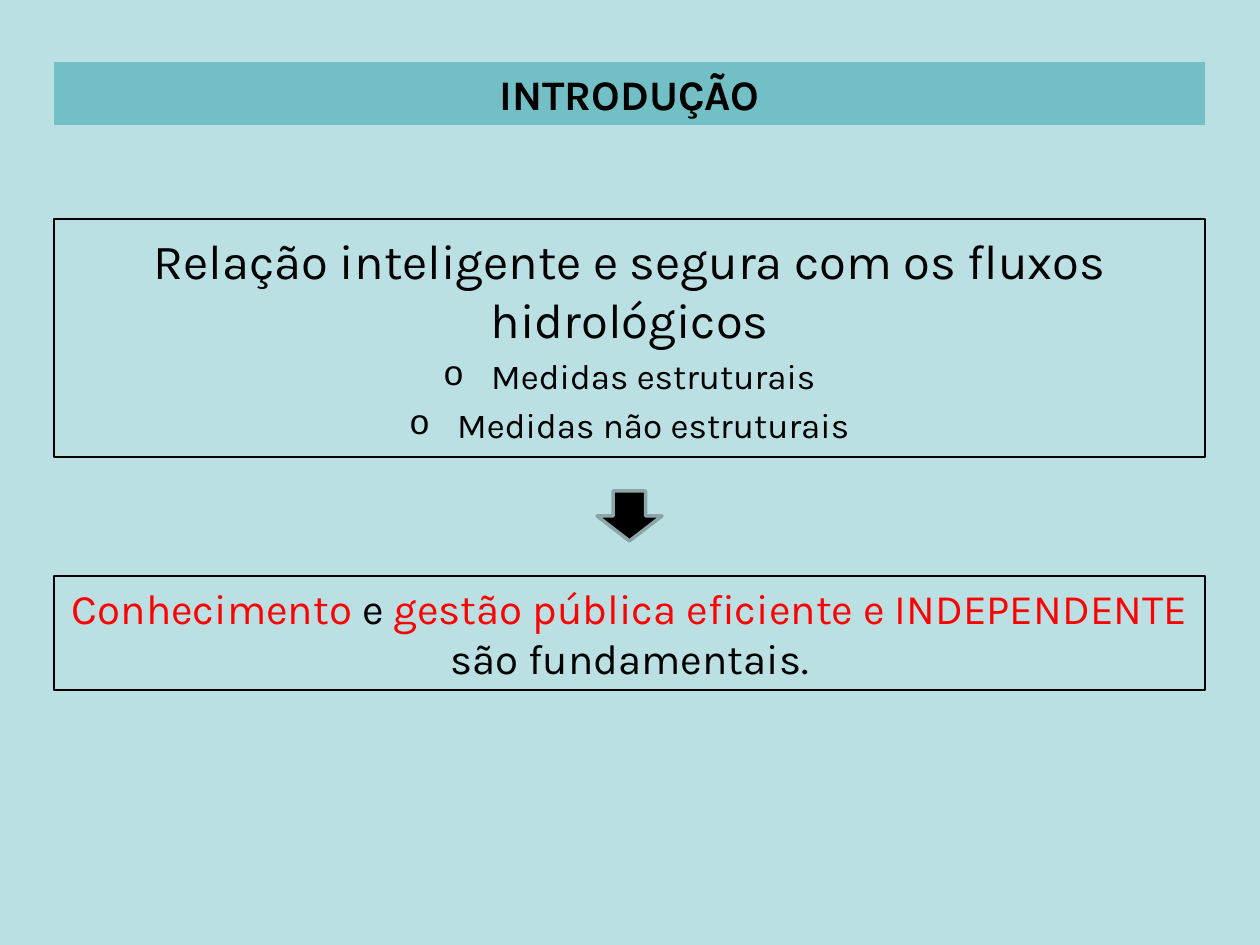
from lxml import etree
from pptx import Presentation
from pptx import util as u
from pptx.dml.color import RGBColor
from pptx.enum import shapes, text
from pptx.oxml import ns

EMU_PER_PX = 914400 / 126
LEFT, WIDTH = 54, 1151
BLACK, RED = "000000", "FF0000"


def px(length):
    return u.Emu(round(length * EMU_PER_PX))


def color(value):
    return RGBColor.from_string(value)


class SlideBuilder:
    def __init__(self, deck, background, font):
        self.font = font
        self.page = deck.slides.add_slide(deck.slide_layouts[1])
        self.paint(self.page.background, background)

    def paint(self, item, fill):
        item.fill.solid()
        item.fill.fore_color.rgb = color(fill)

    def outline(self, shape, line, width):
        shape.line.color.rgb = color(line)
        shape.line.width = u.Pt(width)

    def place(self, shape, left, top, width, height):
        shape.left, shape.top = px(left), px(top)
        shape.width, shape.height = px(width), px(height)
        frame = shape.text_frame
        frame.word_wrap = True
        frame.auto_size = text.MSO_AUTO_SIZE.NONE
        frame.vertical_anchor = text.MSO_ANCHOR.MIDDLE
        return frame

    def style(self, para, size, bold=False):
        para.alignment = text.PP_ALIGN.CENTER
        para.font.name = self.font
        para.font.size = u.Pt(size)
        para.font.bold = bold
        para.font.color.rgb = color(BLACK)

    def bullet(self, para, indent, mark=None):
        """Set a hanging bullet, or none when there is no mark."""
        props = para._p.get_or_add_pPr()
        props.set("marL", str(px(indent)))
        props.set("indent", str(-px(indent)))
        if mark:
            etree.SubElement(props, ns.qn("a:buFont")).set("typeface", "Courier New")
            etree.SubElement(props, ns.qn("a:buChar")).set("char", mark)
        else:
            etree.SubElement(props, ns.qn("a:buNone"))

    def title(self, words, top, height, fill):
        shape = self.page.shapes.title
        frame = self.place(shape, LEFT, top, WIDTH, height)
        self.paint(shape, fill)
        frame.text = words
        self.style(frame.paragraphs[0], 24, bold=True)

    def body(self, heading, items, top, height):
        shape = self.page.placeholders[1]
        frame = self.place(shape, LEFT, top, WIDTH, height)
        self.outline(shape, BLACK, 0.75)
        frame.text = "\n".join([heading, *items])
        first, *rest = frame.paragraphs
        self.bullet(first, 0)
        first.space_before = u.Pt(0)
        self.style(first, 28)
        for para in rest:
            self.bullet(para, 48, "o")
            self.style(para, 20)

    def arrow(self, left, top, width, height):
        shape = self.page.shapes.add_shape(
            shapes.MSO_SHAPE.DOWN_ARROW, px(left), px(top), px(width), px(height))
        shape.shadow.inherit = False
        self.paint(shape, BLACK)
        self.outline(shape, "8AA6A8", 2)

    def framed_text(self, spans, top, height):
        box = self.page.shapes.add_textbox(0, 0, 0, 0)
        frame = self.place(box, LEFT, top, WIDTH, height)
        self.outline(box, BLACK, 0.75)
        para = frame.paragraphs[0]
        self.style(para, 24)
        for words, ink in spans:
            span = para.add_run()
            span.text = words
            span.font.color.rgb = color(ink)


def main():
    deck = Presentation()
    deck.slide_width, deck.slide_height = px(1260), px(945)
    slide = SlideBuilder(deck, "BBE0E3", "Karla")
    slide.title("INTRODUÇÃO", 62, 63, "72BFC5")
    slide.body("Relação inteligente e segura com os fluxos hidrológicos",
               ["Medidas estruturais", "Medidas não estruturais"], 219, 238)
    slide.arrow(597, 491, 65, 50)
    slide.framed_text([("Conhecimento", RED), (" e ", BLACK),
                       ("gestão pública eficiente e INDEPENDENTE ", RED),
                       ("são fundamentais.", BLACK)], 576, 114)
    deck.save("out.pptx")


if __name__ == "__main__":
    main()
